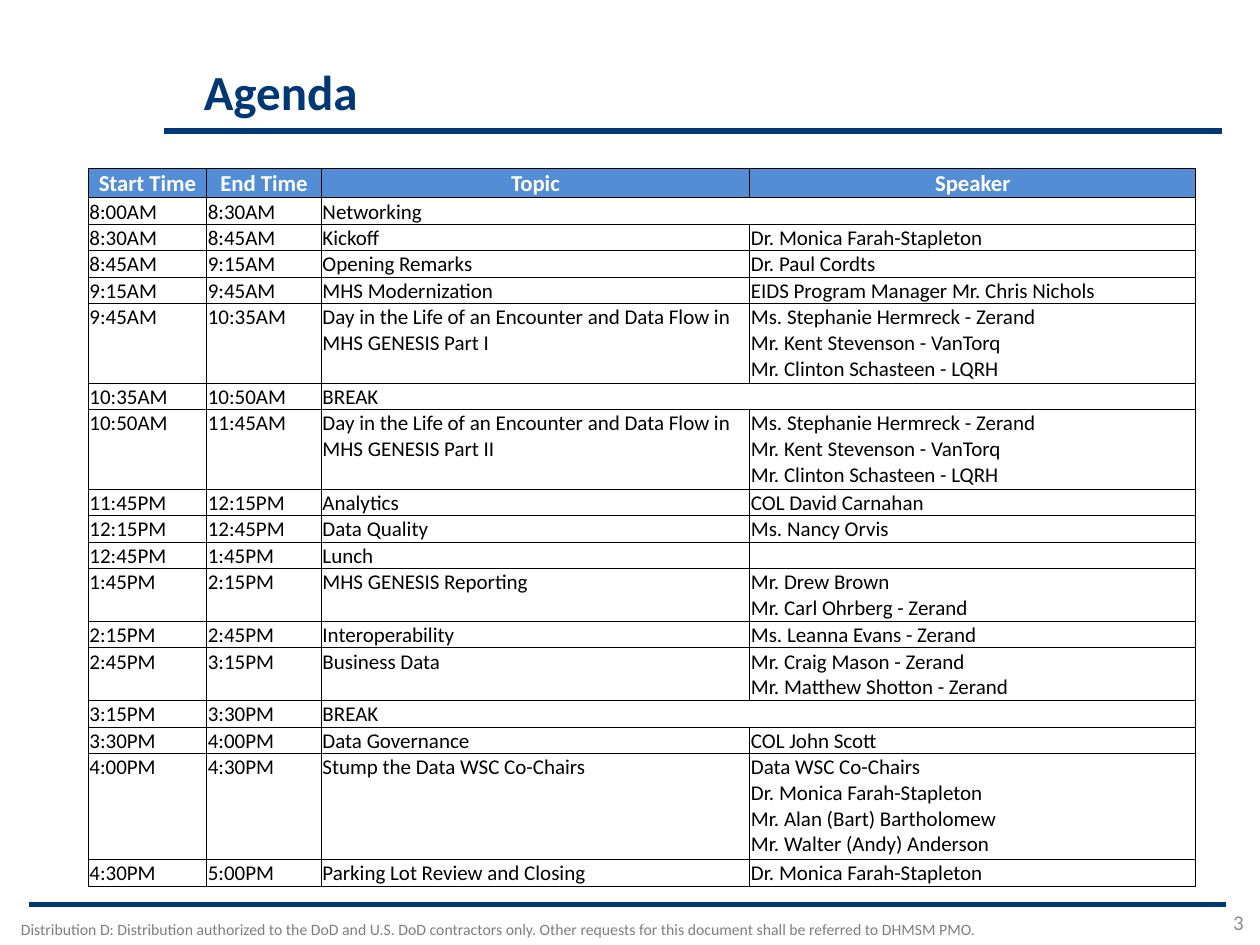
from copy import deepcopy

from lxml import etree
from pptx import Presentation
from pptx.dml.color import RGBColor
from pptx.enum.shapes import MSO_CONNECTOR
from pptx.enum.text import MSO_ANCHOR, PP_ALIGN
from pptx.oxml.ns import qn
from pptx.util import Inches, Pt

LEFT, CENTER, RIGHT = PP_ALIGN.LEFT, PP_ALIGN.CENTER, PP_ALIGN.RIGHT
TOP, BOTTOM = MSO_ANCHOR.TOP, MSO_ANCHOR.BOTTOM
STRAIGHT = MSO_CONNECTOR.STRAIGHT

FONT = "Calibri"
COLORS = {"navy": "003876", "blue": "538DD5", "white": "FFFFFF",
          "black": "000000", "gray": "7F7F7F", "pale": "8C8C8C"}

# Content: a row without a speaker entry spans topic and speaker
TITLE = "Agenda"
FOOTER = ("Distribution D: Distribution authorized to the DoD and U.S. DoD contractors only. "
          "Other requests for this document shall be referred to DHMSM PMO.")
PAGE = "3"
HEADS = ("Start Time", "End Time", "Topic", "Speaker")
TEAM = "Ms. Stephanie Hermreck - Zerand\nMr. Kent Stevenson - VanTorq\nMr. Clinton Schasteen - LQRH"
FLOW = "Day in the Life of an Encounter and Data Flow in MHS GENESIS Part "
ROWS = [
    ("8:00AM", "8:30AM", "Networking"),
    ("8:30AM", "8:45AM", "Kickoff", "Dr. Monica Farah-Stapleton"),
    ("8:45AM", "9:15AM", "Opening Remarks", "Dr. Paul Cordts"),
    ("9:15AM", "9:45AM", "MHS Modernization", "EIDS Program Manager Mr. Chris Nichols"),
    ("9:45AM", "10:35AM", FLOW + "I", TEAM),
    ("10:35AM", "10:50AM", "BREAK"),
    ("10:50AM", "11:45AM", FLOW + "II", TEAM),
    ("11:45PM", "12:15PM", "Analytics", "COL David Carnahan"),
    ("12:15PM", "12:45PM", "Data Quality", "Ms. Nancy Orvis"),
    ("12:45PM", "1:45PM", "Lunch", ""),
    ("1:45PM", "2:15PM", "MHS GENESIS Reporting", "Mr. Drew Brown\nMr. Carl Ohrberg - Zerand"),
    ("2:15PM", "2:45PM", "Interoperability", "Ms. Leanna Evans - Zerand"),
    ("2:45PM", "3:15PM", "Business Data", "Mr. Craig Mason - Zerand\nMr. Matthew Shotton - Zerand"),
    ("3:15PM", "3:30PM", "BREAK"),
    ("3:30PM", "4:00PM", "Data Governance", "COL John Scott"),
    ("4:00PM", "4:30PM", "Stump the Data WSC Co-Chairs",
     "Data WSC Co-Chairs\nDr. Monica Farah-Stapleton\n"
     "Mr. Alan (Bart) Bartholomew\nMr. Walter (Andy) Anderson"),
    ("4:30PM", "5:00PM", "Parking Lot Review and Closing", "Dr. Monica Farah-Stapleton"),
]
WIDTHS = (0.94, 0.91, 3.4, 3.54)
HEAD_H, LINE_H = 0.23, 0.21


def rgb(name):
    return RGBColor.from_string(COLORS[name])


def write(frame, text, size, color, bold=False, align=LEFT):
    para = frame.paragraphs[0]
    para.text = text
    para.alignment = align
    for run in para.runs:
        run.font.name, run.font.size, run.font.bold = FONT, Pt(size), bold
        run.font.color.rgb = rgb(color)
    # Line breaks and empty cells keep the text size too
    for gap in para._p.findall(qn("a:br")):
        gap.append(deepcopy(para.runs[0]._r.rPr))
    if not text:
        etree.SubElement(para._p, qn("a:endParaRPr"), sz=str(size * 100))
    return para


def add_text(slide, box, text, size, color, bold=False, align=LEFT, anchor=TOP):
    frame = slide.shapes.add_textbox(*map(Inches, box)).text_frame
    frame.word_wrap = True
    frame.vertical_anchor = anchor
    return write(frame, text, size, color, bold, align)


def add_rule(slide, left, right, y):
    rule = slide.shapes.add_connector(
        STRAIGHT, Inches(left), Inches(y), Inches(right), Inches(y))
    rule.line.color.rgb = rgb("navy")
    rule.line.width = Pt(3)
    etree.SubElement(rule._element.spPr, qn("a:effectLst"))


def add_borders(cell):
    props = cell._tc.get_or_add_tcPr()
    for side in ("lnL", "lnR", "lnT", "lnB"):
        line = etree.SubElement(props, qn("a:" + side), w=str(Pt(0.5)))
        fill = etree.SubElement(line, qn("a:solidFill"))
        etree.SubElement(fill, qn("a:srgbClr"), val=COLORS["black"])


def add_agenda(slide):
    heights = [HEAD_H] + [LINE_H * (row[-1].count("\n") + 1) for row in ROWS]
    frame = slide.shapes.add_table(
        len(heights), len(WIDTHS), Inches(0.7), Inches(1.34),
        Inches(sum(WIDTHS)), Inches(sum(heights)))
    table = frame.table
    table.first_row = table.horz_banding = False
    for col, width in zip(table.columns, WIDTHS):
        col.width = Inches(width)
    for line, height in zip(table.rows, heights):
        line.height = Inches(height)

    for r, row in enumerate([HEADS] + ROWS):
        for c in range(len(WIDTHS)):
            cell = table.cell(r, c)
            cell.margin_left = cell.margin_right = cell.margin_top = Inches(0.01)
            cell.margin_bottom = 0
            add_borders(cell)
            text = row[c] if c < len(row) else ""
            if r == 0:
                cell.fill.solid()
                cell.fill.fore_color.rgb = rgb("blue")
                write(cell.text_frame, text, 13, "white", True, CENTER)
            else:
                cell.fill.background()
                write(cell.text_frame, text, 12, "black")
        if len(row) < len(WIDTHS):
            table.cell(r, 2).merge(table.cell(r, 3))


def main():
    deck = Presentation()
    deck.slide_width, deck.slide_height = Inches(10), Inches(7.5)
    slide = deck.slides.add_slide(deck.slide_layouts[6])

    # Rules and footer
    add_rule(slide, 0.23, 9.73, 7.18)
    add_rule(slide, 1.3, 9.7, 1.04)
    add_text(slide, (0, 7.25, 7.9, 0.25), FOOTER, 9, "gray", align=CENTER)

    # Title, page number and agenda
    title = add_text(slide, (1.52, 0.01, 8.17, 1), TITLE, 28, "navy", True, anchor=BOTTOM)
    title.line_spacing = 0.9
    add_text(slide, (9.14, 7.16, 0.83, 0.31), PAGE, 12, "pale", align=RIGHT, anchor=BOTTOM)
    add_agenda(slide)

    deck.save("out.pptx")


if __name__ == "__main__":
    main()
